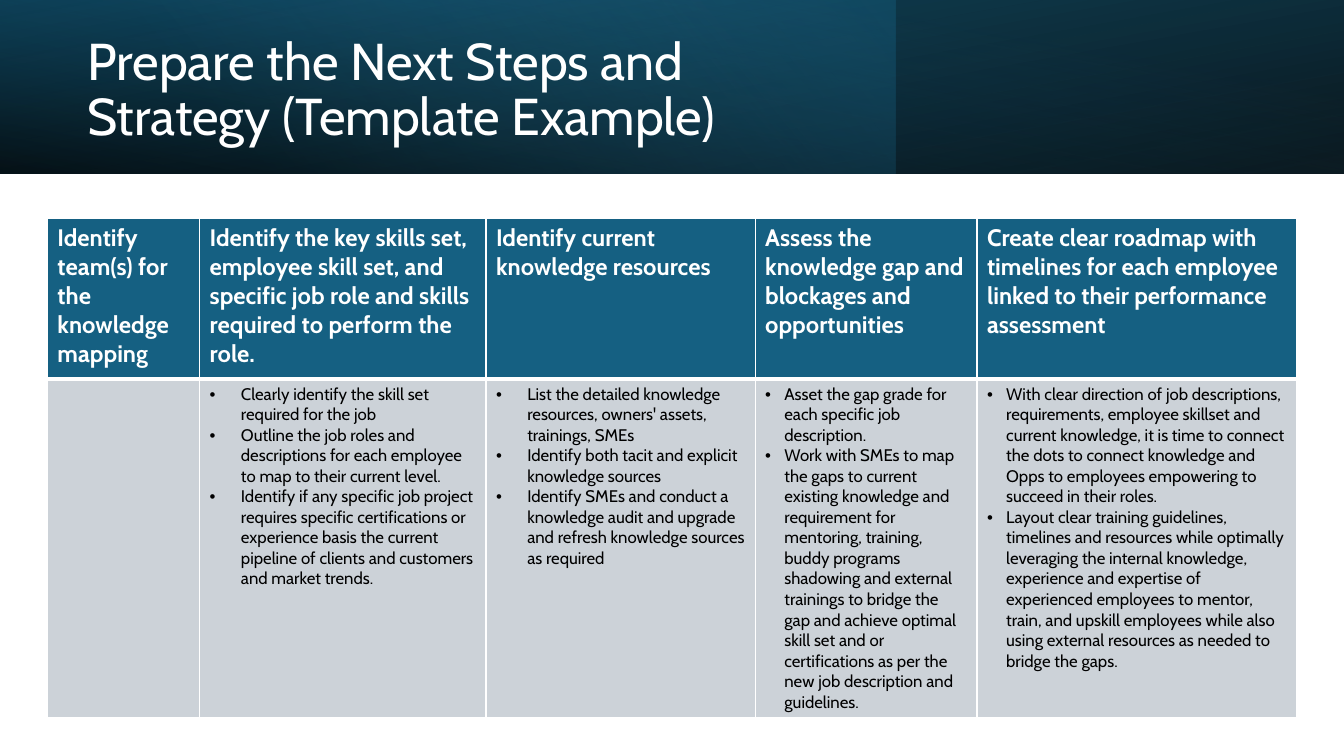
import pptx
import pptx.util
import pptx.dml.color
import pptx.enum.shapes
import pptx.enum.text
import pptx.oxml
import pptx.oxml.ns

Inches, Pt = pptx.util.Inches, pptx.util.Pt
RGB = pptx.dml.color.RGBColor
WHITE = RGB(0xFF, 0xFF, 0xFF)
BLACK = RGB(0x00, 0x00, 0x00)
TEAL = RGB(0x15, 0x60, 0x82)
DEEP = RGB(0x10, 0x48, 0x62)
SKY = RGB(0x46, 0xB1, 0xE1)
GREY = RGB(0xCC, 0xD2, 0xD8)

WIDE, HIGH = 13.33, 7.5
BAND = 1.72
TITLE = dict(name="Cabin", size=Pt(37))
HEAD = dict(name="Cabin", size=Pt(17), bold=True)
BODY = dict(name="Cabin", size=Pt(12), bold=False)

# share of the band's width, rotation, flip, angle, stops (position, colour, alpha)
LAYERS = [
    (1, 180, True, 100, [(0, BLACK, 96), (100, DEEP, 100)]),
    (2 / 3, 0, False, 140, [(0, TEAL, 41), (74, SKY, 0)]),
    (1, 0, True, 260, [(0, BLACK, 63), (78, TEAL, 15)]),
]

# width, bullet indent, heading, bullets
STEPS = [
    (1.51, 0, "Identify team(s) for the knowledge mapping", []),
    (2.84, 0.31,
     "Identify the key skills set, employee skill set, and specific job role "
     "and skills required to perform the role.",
     ["Clearly identify the skill set required for the job",
      "Outline the job roles and descriptions for each employee to map to "
      "their current level.",
      "Identify if any specific job project requires specific certifications "
      "or experience basis the current pipeline of clients and customers and "
      "market trends."]),
    (2.67, 0.31, "Identify current knowledge resources",
     ["List the detailed knowledge resources, owners' assets, trainings, SMEs",
      "Identify both tacit and explicit knowledge sources",
      "Identify SMEs and conduct a knowledge audit and upgrade and refresh "
      "knowledge sources as required"]),
    (2.2, 0.19, "Assess the knowledge gap and blockages and opportunities",
     ["Asset the gap grade for each specific job description.",
      "Work with SMEs to map the gaps to current existing knowledge and "
      "requirement for mentoring, training, buddy programs shadowing and "
      "external trainings to bridge the gap and achieve optimal skill set and "
      "or certifications as per the new job description and guidelines."]),
    (3.17, 0.19,
     "Create clear roadmap with timelines for each employee linked to their "
     "performance assessment",
     ["With clear direction of job descriptions, requirements, employee "
      "skillset and current knowledge, it is time to connect the dots to "
      "connect knowledge and Opps to employees empowering to succeed in their "
      "roles.",
      "Layout clear training guidelines, timelines and resources while "
      "optimally leveraging the internal knowledge, experience and expertise "
      "of experienced employees to mentor, train, and upskill employees while "
      "also using external resources as needed to bridge the gaps."]),
]


def node(text):
    """Turn a snippet of DrawingML into an element."""
    space = pptx.oxml.ns.nsdecls("a")
    return pptx.oxml.parse_xml(text.replace(">", f" {space}>", 1))


def style(font, form, color):
    for key, value in form.items():
        setattr(font, key, value)
    font.color.rgb = color


def blend(shape, angle, stops):
    """Fill a shape with a linear gradient of partly clear stops."""
    marks = "".join(
        f'<a:gs pos="{pos * 1000}"><a:srgbClr val="{color}">'
        f'<a:alpha val="{alpha * 1000}"/></a:srgbClr></a:gs>'
        for pos, color, alpha in stops)
    fill = node(f'<a:gradFill rotWithShape="1"><a:gsLst>{marks}</a:gsLst>'
                f'<a:lin ang="{angle * 60000}" scaled="0"/></a:gradFill>')
    shape._element.spPr.find(pptx.oxml.ns.qn("a:prstGeom")).addnext(fill)


def banner(slide, left, top, width, height):
    for share, turn, flip, angle, stops in LAYERS:
        layer = slide.shapes.add_shape(
            pptx.enum.shapes.MSO_SHAPE.RECTANGLE, Inches(left), Inches(top),
            Inches(width * share), Inches(height))
        layer.shadow.inherit = False
        layer.line.fill.background()
        layer.rotation = turn
        if flip:
            layer._element.spPr.xfrm.set("flipH", "1")
        blend(layer, angle, stops)

    box = slide.shapes.add_textbox(
        Inches(left + 0.77), Inches(top + 0.27), Inches(7.72), Inches(1.27))
    frame = box.text_frame
    frame.word_wrap = True
    frame.vertical_anchor = pptx.enum.text.MSO_ANCHOR.MIDDLE
    line = frame.paragraphs[0]
    line.line_spacing = 0.9
    run = line.add_run()
    run.text = "Prepare the Next Steps and Strategy (Template Example)"
    style(run.font, TITLE, WHITE)


def border(cell, top, bottom):
    """Rule a cell in white; the top and bottom widths are in points."""
    sides = [("L", 1), ("R", 1), ("T", top), ("B", bottom)]
    for spot, (side, width) in enumerate(sides):
        cell._tc.get_or_add_tcPr().insert(spot, node(
            f'<a:ln{side} w="{Pt(width)}"><a:solidFill>'
            f'<a:srgbClr val="{WHITE}"/></a:solidFill></a:ln{side}>'))


def write(cell, lines, form, color, indent=0):
    for spot, text in enumerate(lines):
        frame = cell.text_frame
        para = frame.add_paragraph() if spot else frame.paragraphs[0]
        run = para.add_run()
        run.text = text
        style(run.font, form, color)
        if indent:
            props = para._p.get_or_add_pPr()
            props.set("marL", str(Inches(indent)))
            props.set("indent", str(-Inches(indent)))
            props.append(node('<a:buFont typeface="Arial"></a:buFont>'))
            props.append(node('<a:buChar char="•"></a:buChar>'))


def paint(cell, color, top, bottom):
    cell.fill.solid()
    cell.fill.fore_color.rgb = color
    border(cell, top, bottom)


def plan(slide, left, top, width, height):
    """Place the table of steps, one column for each step."""
    table = slide.shapes.add_table(
        2, len(STEPS), Inches(left), Inches(top), Inches(width),
        Inches(height)).table
    table.rows[0].height = Inches(1.59)
    table.rows[1].height = Inches(height - 1.59)
    for col, (span, indent, head, points) in enumerate(STEPS):
        table.columns[col].width = Inches(span)
        upper, lower = table.cell(0, col), table.cell(1, col)
        paint(upper, TEAL, 1, 3)
        paint(lower, GREY, 3, 1)
        write(upper, [head], HEAD, WHITE)
        write(lower, points, BODY, BLACK, indent)


def main():
    deck = pptx.Presentation()
    deck.slide_width, deck.slide_height = Inches(WIDE), Inches(HIGH)
    slide = deck.slides.add_slide(deck.slide_layouts[6])
    banner(slide, 0, 0, WIDE, BAND)
    plan(slide, 0.47, 2.17, sum(step[0] for step in STEPS), 4.95)
    deck.save("out.pptx")


if __name__ == "__main__":
    main()
